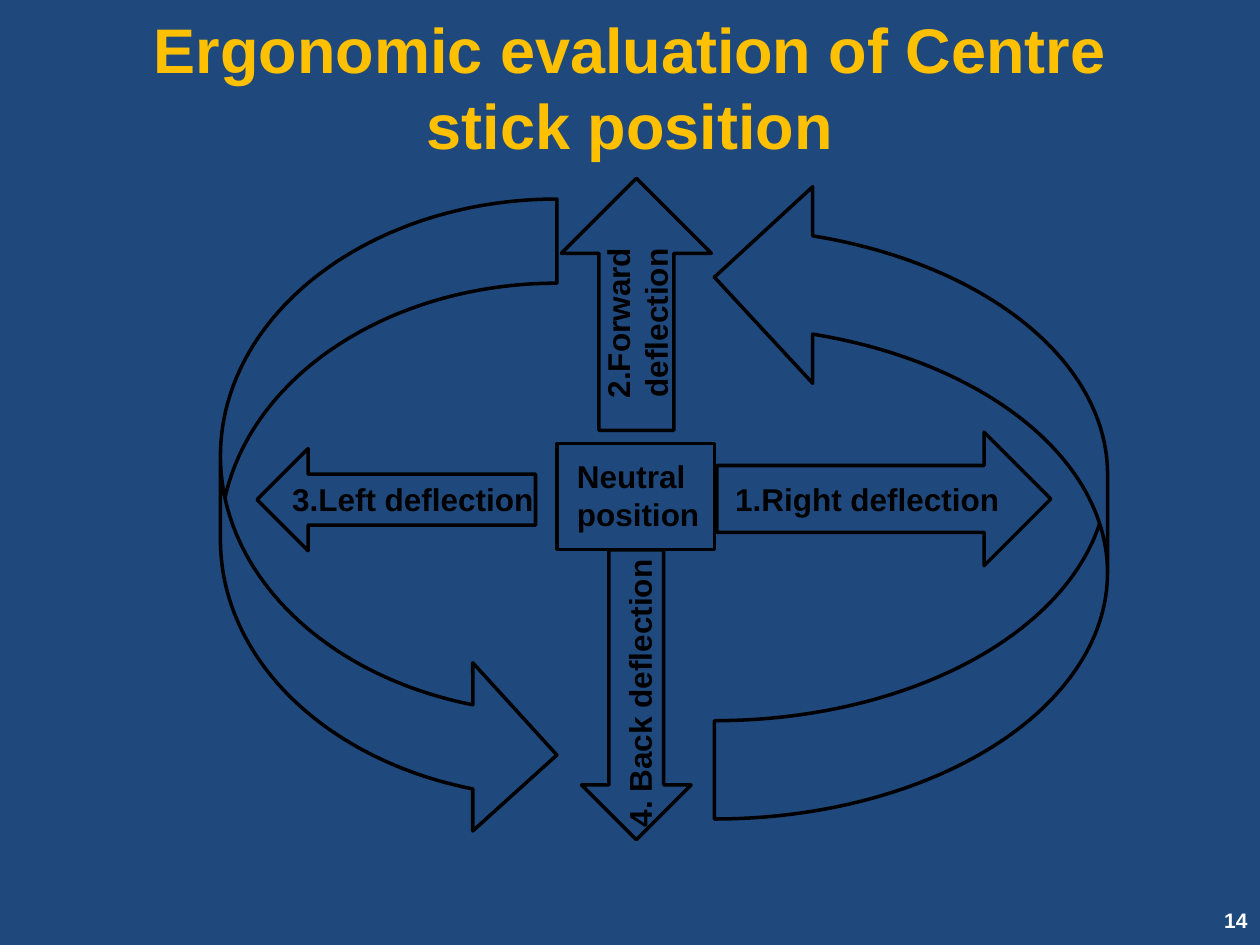
from pptx import Presentation
from pptx.dml.color import RGBColor
from pptx.enum.shapes import MSO_SHAPE
from pptx.enum.text import MSO_ANCHOR, MSO_AUTO_SIZE, PP_ALIGN
from pptx.util import Inches, Pt

NAVY = RGBColor(0x1F, 0x49, 0x7D)
GOLD = RGBColor(0xFF, 0xC0, 0x00)
BLACK = RGBColor(0, 0, 0)
WHITE = RGBColor(0xFF, 0xFF, 0xFF)

ARROW = MSO_SHAPE.RIGHT_ARROW
CURVE = MSO_SHAPE.CURVED_RIGHT_ARROW
BOX = MSO_SHAPE.RECTANGLE


def write(shape, text, size, color, align, anchor):
    frame = shape.text_frame
    frame.text = text
    frame.vertical_anchor = anchor
    para = frame.paragraphs[0]
    para.alignment = align
    font = para.runs[0].font
    looks = {"name": "Arial", "size": Pt(size), "bold": True}
    for key, value in looks.items():
        setattr(font, key, value)
    font.color.rgb = color


deck = Presentation()
deck.slide_width, deck.slide_height = Inches(10), Inches(7.5)
slide = deck.slides.add_slide(deck.slide_layouts[5])
slide.background.fill.solid()
slide.background.fill.fore_color.rgb = NAVY

title = slide.shapes.title
place = {"left": 0.5, "top": 0.33, "width": 9, "height": 1.25}
for key, value in place.items():
    setattr(title, key, Inches(value))
write(title, "Ergonomic evaluation of Centre stick position", 36, GOLD,
      PP_ALIGN.CENTER, MSO_ANCHOR.MIDDLE)
title.text_frame.auto_size = MSO_AUTO_SIZE.NONE
title.text_frame.margin_bottom = Inches(0.59)

number = slide.shapes.add_textbox(*map(Inches, (9.33, 7.1, 0.67, 0.4)))
number.text_frame.word_wrap = True
write(number, "14", 12, WHITE, PP_ALIGN.RIGHT, MSO_ANCHOR.MIDDLE)

figures = [
    (ARROW, (2.04, 3.56, 2.21, 0.81), 180, False, ""),
    (CURVE, (1.75, 1.58, 2.67, 5.08), 0, False, ""),
    (ARROW, (4.05, 1.82, 2, 1.19), 270, False, "2.Forward deflection"),
    (ARROW, (5.69, 3.43, 2.65, 1.06), 0, False, "1.Right deflection"),
    (ARROW, (3.9, 5.08, 2.3, 0.87), 90, False, ""),
    (BOX, (4.42, 3.52, 1.25, 0.84), 0, False, ""),
    (CURVE, (5.67, 1.42, 3.12, 5.08), 0, True, ""),
]
for kind, spot, turn, flip, text in figures:
    shape = slide.shapes.add_shape(kind, *map(Inches, spot))
    shape.shadow.inherit = False
    shape.rotation = turn
    shape.fill.background()
    shape.line.color.rgb = BLACK
    shape.line.width = Pt(2)
    if flip:
        for side in ("flipH", "flipV"):
            shape._element.spPr.xfrm.set(side, "1")
    if text:
        write(shape, text, 18, BLACK, PP_ALIGN.CENTER, MSO_ANCHOR.MIDDLE)

labels = [
    ("Neutral position", (4.48, 3.58, 1.25, 0.71), 0, True),
    ("3.Left deflection", (2.22, 3.76, 2.14, 0.4), 0, False),
    ("4. Back deflection", (3.87, 5.26, 2.41, 0.4), 270, True),
]
for text, spot, turn, wrap in labels:
    label = slide.shapes.add_textbox(*map(Inches, spot))
    label.rotation = turn
    write(label, text, 18, BLACK, PP_ALIGN.LEFT, MSO_ANCHOR.TOP)
    label.text_frame.word_wrap = wrap
    label.text_frame.auto_size = MSO_AUTO_SIZE.SHAPE_TO_FIT_TEXT

deck.save("out.pptx")
